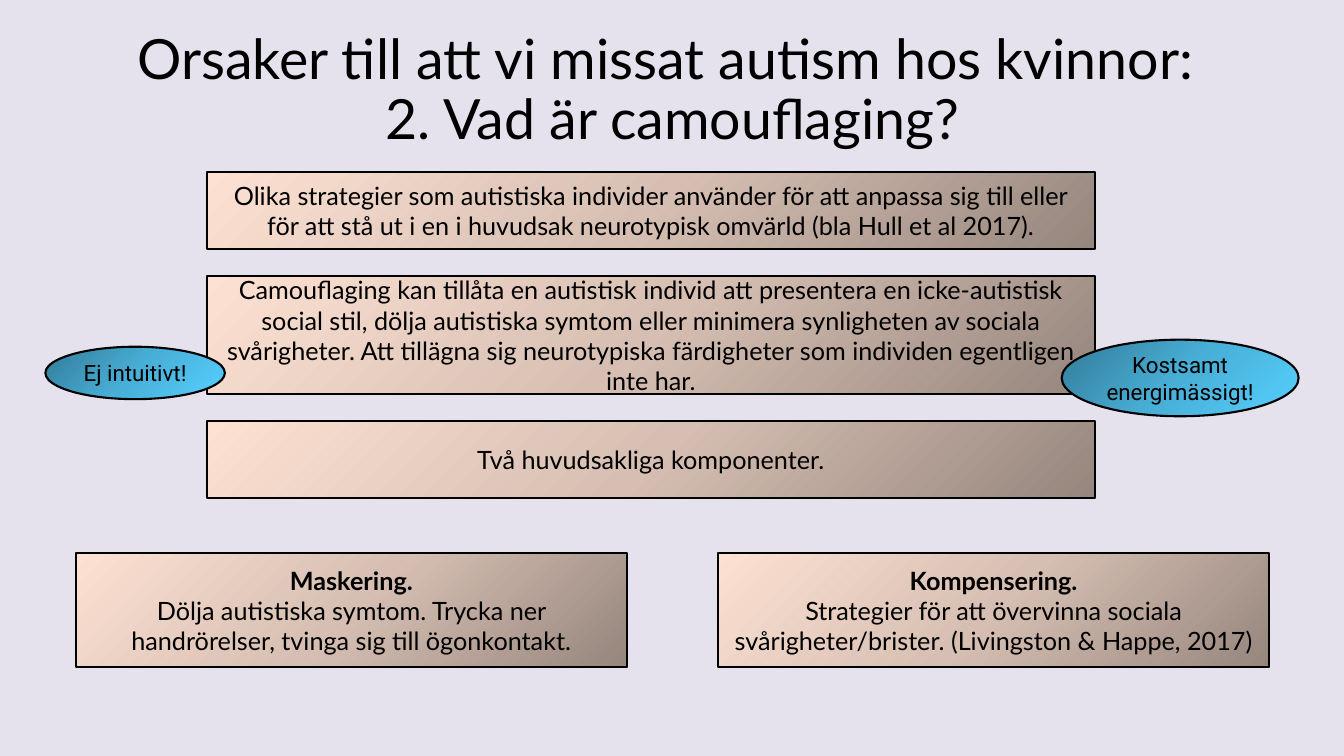
"""Build the slide on camouflaging as a reason why autism in women is missed."""
from pptx import Presentation
from pptx.dml.color import RGBColor
from pptx.enum import shapes, text
from pptx.oxml import parse_xml
from pptx.oxml.ns import nsdecls
from pptx.util import Inches, Pt

BACKGROUND = RGBColor(0xE5, 0xE2, 0xEE)
BLACK = RGBColor(0x00, 0x00, 0x00)
SAND = [RGBColor(0x96, 0x86, 0x7D), RGBColor(0xD6, 0xBE, 0xB2), RGBColor(0xFD, 0xE2, 0xD3)]
SKY = [RGBColor(0x33, 0x7B, 0x97), RGBColor(0x48, 0xAF, 0xD7), RGBColor(0x56, 0xD0, 0xFF)]
FROM_CORNER = ('<a:path path="circle"><a:fillToRect l="100000" t="100000"/></a:path>'
               '<a:tileRect r="-100000" b="-100000"/>')
DIAGONAL = '<a:lin ang="2700000" scaled="1"/>'


def style_text(paragraph, font_name, size, bold=False):
    paragraph.alignment = text.PP_ALIGN.CENTER
    paragraph.font.name = font_name
    paragraph.font.size = Pt(size)
    paragraph.font.bold = bold
    paragraph.font.color.rgb = BLACK


def add_panel(kind, place, lines, colors, direction, font_name, size):
    panel = slide.shapes.add_shape(kind, *map(Inches, place))
    panel.shadow.inherit = False
    panel.fill.gradient()
    stops = "".join(f'<a:gs pos="{50000 * i}"><a:srgbClr val="{color}"/></a:gs>'
                    for i, color in enumerate(colors))
    gradient = parse_xml(f'<a:gradFill {nsdecls("a")} rotWithShape="1">'
                         f'<a:gsLst>{stops}</a:gsLst>{direction}</a:gradFill>')
    properties = panel._element.spPr
    properties.replace(properties.find(gradient.tag), gradient)
    panel.line.color.rgb = BLACK
    panel.line.width = Pt(1.5)
    frame = panel.text_frame
    frame.word_wrap = True
    frame.vertical_anchor = text.MSO_ANCHOR.MIDDLE
    frame.text = "\n".join(lines)
    for i, paragraph in enumerate(frame.paragraphs):
        style_text(paragraph, font_name, size, bold=i < len(lines) - 1)


deck = Presentation()
deck.slide_width, deck.slide_height = Inches(13.33), Inches(7.5)
slide = deck.slides.add_slide(deck.slide_layouts[5])
slide.background.fill.solid()
slide.background.fill.fore_color.rgb = BACKGROUND

title = slide.shapes.title
title.left, title.top, title.width, title.height = map(Inches, (0.92, 0.46, 11.5, 0.89))
title.text_frame.text = "Orsaker till att vi missat autism hos kvinnor: \v2. Vad är camouflaging?"
title.text_frame.word_wrap = True
title.text_frame.auto_size = text.MSO_AUTO_SIZE.NONE
title.text_frame.vertical_anchor = text.MSO_ANCHOR.MIDDLE
heading = title.text_frame.paragraphs[0]
heading.line_spacing = 0.9
style_text(heading, "Lato", 39.6)

statements = [
    (0.76, "Olika strategier som autistiska individer använder för att anpassa sig till eller "
           "för att stå ut i en i huvudsak neurotypisk omvärld (bla Hull et al 2017)."),
    (1.17, "Camouflaging kan tillåta en autistisk individ att presentera en icke-autistisk "
           "social stil, dölja autistiska symtom eller minimera synligheten av sociala "
           "svårigheter. Att tillägna sig neurotypiska färdigheter som individen egentligen "
           "inte har."),
    (0.76, "Två huvudsakliga komponenter."),
]
top = 1.71
for height, statement in statements:
    add_panel(shapes.MSO_SHAPE.RECTANGLE, (2.05, top, 8.81, height), [statement],
              SAND, FROM_CORNER, "Lato", 18)
    top += height + 0.27

components = [
    (0.75, "Maskering.",
     "Dölja autistiska symtom. Trycka ner handrörelser, tvinga sig till ögonkontakt."),
    (7.12, "Kompensering.",
     "Strategier för att övervinna sociala svårigheter/brister. (Livingston & Happe, 2017)"),
]
for left, component, description in components:
    add_panel(shapes.MSO_SHAPE.RECTANGLE, (left, 5.49, 5.47, 1.13), [component, description],
              SAND, FROM_CORNER, "Lato", 18)

remarks = [
    ((10.53, 3.37, 2.35, 0.76), "Kostsamt energimässigt!"),
    ((0.45, 3.44, 1.78, 0.52), "Ej intuitivt!"),
]
for place, remark in remarks:
    add_panel(shapes.MSO_SHAPE.OVAL, place, [remark], SKY, DIAGONAL, "Roboto", 16)

deck.save("out.pptx")
